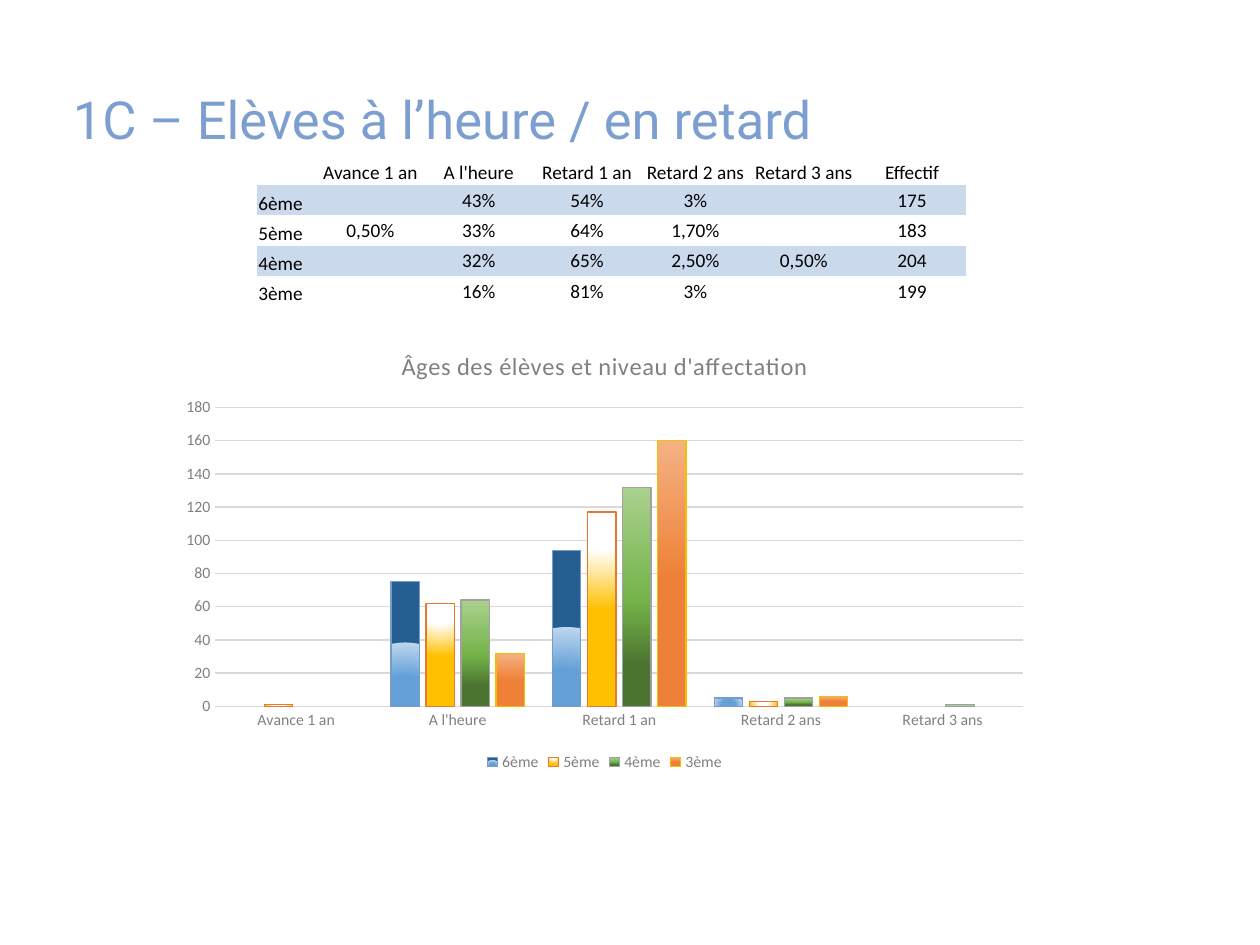
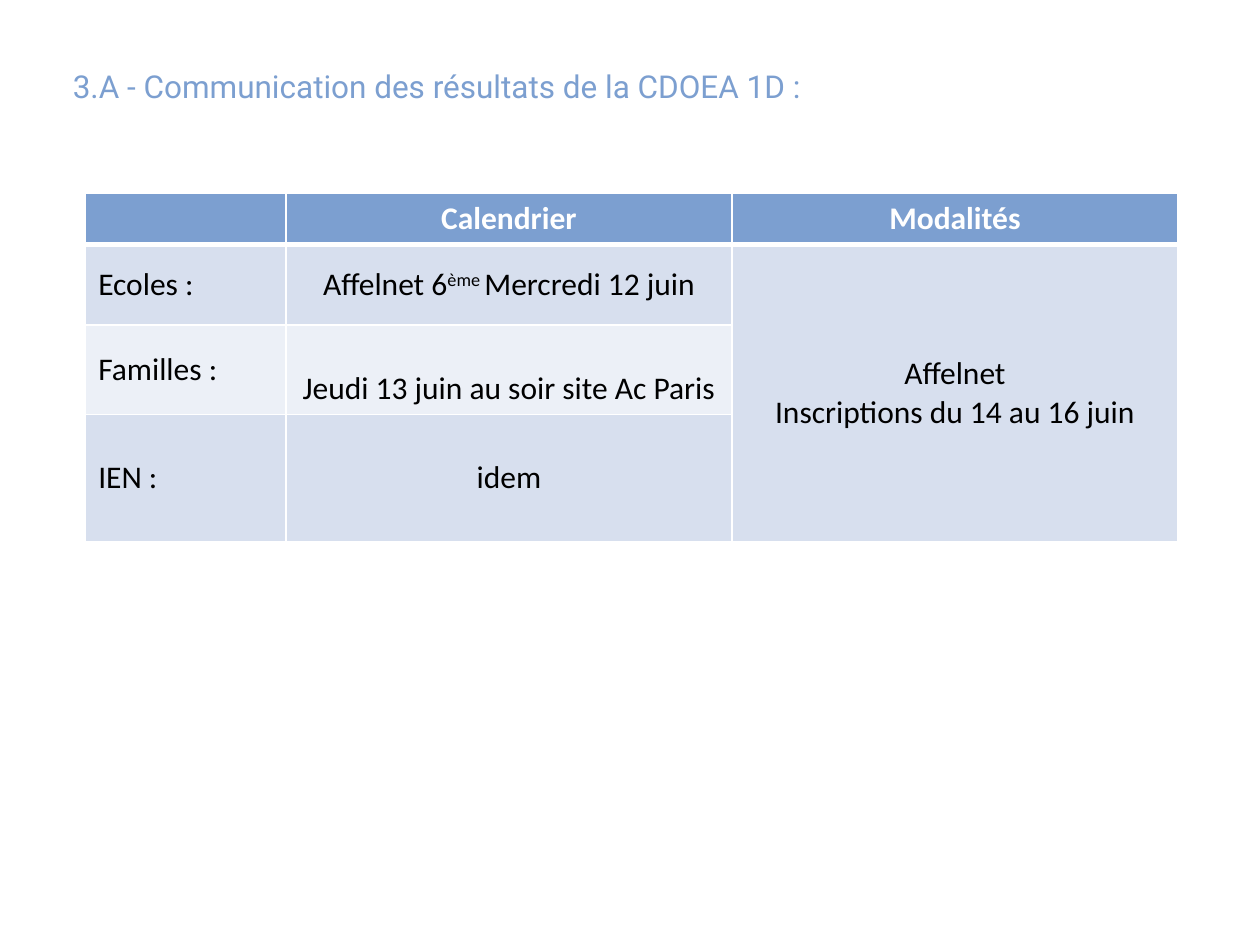
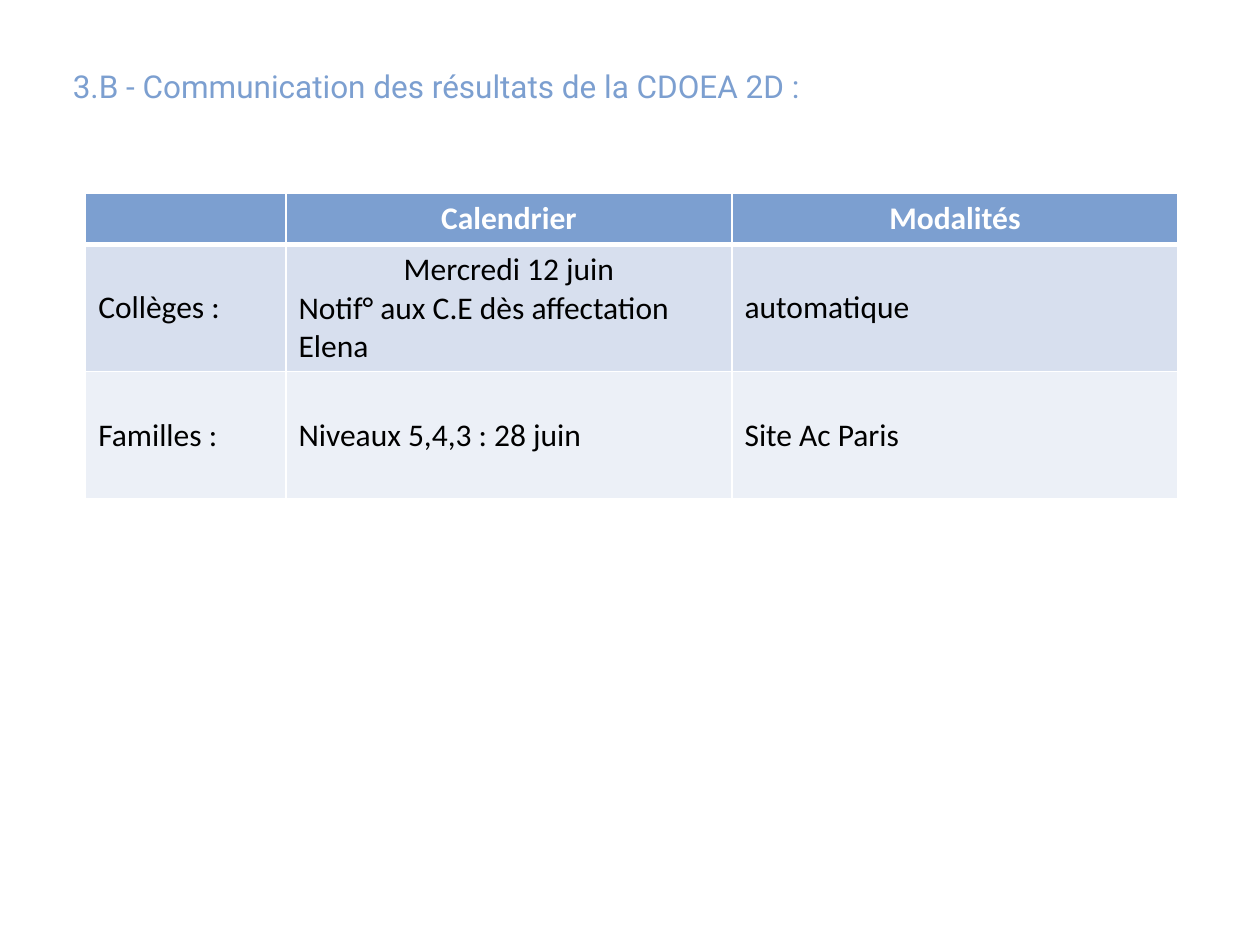
"""Build three slides on pupils' ages and on how the CDOEA results are announced."""
from lxml.etree import SubElement
from pptx import Presentation
from pptx.chart.data import CategoryChartData
from pptx.dml.color import RGBColor
from pptx.enum.chart import XL_CHART_TYPE as ChartType
from pptx.enum.chart import XL_LEGEND_POSITION as LegendPosition
from pptx.enum.chart import XL_TICK_MARK as TickMark
from pptx.enum.text import MSO_ANCHOR as Anchor
from pptx.enum.text import PP_ALIGN as Align
from pptx.oxml.ns import qn
from pptx.util import Inches, Pt

WIDTH, HEIGHT = Inches(10), Inches(7.5)
COLUMNS, ROWS = 100, 75

BLUE = RGBColor(0x7C, 0x9F, 0xD0)
PALE_BLUE = RGBColor(0xCB, 0xD9, 0xEC)
BAND_DARK = RGBColor(0xD7, 0xDF, 0xEE)
BAND_LIGHT = RGBColor(0xEC, 0xF0, 0xF7)
WHITE = RGBColor(0xFF, 0xFF, 0xFF)
BLACK = RGBColor(0x00, 0x00, 0x00)
GREY = RGBColor(0x80, 0x80, 0x80)
RULE_GREY = RGBColor(0xD9, 0xD9, 0xD9)
SKY = RGBColor(0x63, 0xA0, 0xD7)
PALE_SKY = RGBColor(0xBD, 0xD7, 0xEE)
NAVY = RGBColor(0x25, 0x5E, 0x91)
SKY_EDGE = RGBColor(0x79, 0x9B, 0xCB)
GOLD = RGBColor(0xFF, 0xC0, 0x00)
ORANGE_EDGE = RGBColor(0xE8, 0x7A, 0x30)
FOREST = RGBColor(0x4B, 0x74, 0x30)
GREEN = RGBColor(0x74, 0xB3, 0x49)
PALE_GREEN = RGBColor(0xA9, 0xD1, 0x8E)
GREY_EDGE = RGBColor(0xA1, 0xA1, 0xA1)
ORANGE = RGBColor(0xEE, 0x81, 0x37)
PEACH = RGBColor(0xF4, 0xB1, 0x83)
GOLD_EDGE = RGBColor(0xF9, 0xBC, 0x00)

NO_TABLE_STYLE = "{2D5ABB26-0587-4C30-8999-92F81FD0307C}"
THIN, THICK = Pt(1), Pt(3)

TITLE_FONT = {"name": "Roboto", "color": BLUE}
AXIS_FONT = {"name": "Calibri", "size": Pt(9), "color": GREY}
CHART_TITLE_FONT = {"name": "Calibri", "size": Pt(14), "bold": False, "color": GREY}
AGE_FONT = {"name": "Calibri", "size": Pt(11), "color": BLACK}
SCHEDULE_FONT = {"name": "Calibri", "size": Pt(18), "color": BLACK}
SCHEDULE_HEAD_FONT = SCHEDULE_FONT | {"bold": True, "color": WHITE}

AGE_LOOK = {
    "font": AGE_FONT, "head_font": AGE_FONT, "head_fill": WHITE,
    "bands": (PALE_BLUE, WHITE), "bordered": False, "label_anchor": Anchor.BOTTOM,
    "margins": {"margin_left": Inches(0.01), "margin_top": Inches(0.01),
                "margin_right": Inches(0.01), "margin_bottom": 0},
}
SCHEDULE_LOOK = {
    "font": SCHEDULE_FONT, "head_font": SCHEDULE_HEAD_FONT, "head_fill": BLUE,
    "bands": (BAND_DARK, BAND_LIGHT), "bordered": True, "label_anchor": Anchor.MIDDLE,
    "margins": {},
}

AGE_TABLE = [
    ["", "Avance 1 an", "A l'heure", "Retard 1 an", "Retard 2 ans", "Retard 3 ans", "Effectif"],
    ["6ème", "", "43%", "54%", "3%", "", "175"],
    ["5ème", "0,50%", "33%", "64%", "1,70%", "", "183"],
    ["4ème", "", "32%", "65%", "2,50%", "0,50%", "204"],
    ["3ème", "", "16%", "81%", "3%", "", "199"],
]
LEVELS = [
    ("6ème", (None, 75, 94, 5, None), SKY_EDGE,
     [(46, SKY), (100, PALE_SKY), (100, NAVY)], (50, 130, 50, -30)),
    ("5ème", (1, 62, 117, 3, None), ORANGE_EDGE,
     [(35, WHITE), (39, WHITE), (100, GOLD)], (50, -80, 50, 180)),
    ("4ème", (None, 64, 132, 5, 1), GREY_EDGE,
     [(19, FOREST), (48, GREEN), (100, PALE_GREEN)], None),
    ("3ème", (None, 32, 160, 6, None), GOLD_EDGE,
     [(48, ORANGE), (100, PEACH)], None),
]
SCHEDULE_HEAD = ["", "Calendrier", "Modalités"]
SCHEDULE_1D = [
    SCHEDULE_HEAD,
    ["Ecoles :", "Affelnet 6^ème ^Mercredi 12 juin", "Affelnet\nInscriptions du 14 au 16 juin"],
    ["Familles :", "Jeudi 13 juin au soir site Ac Paris", ""],
    ["IEN :", "idem", ""],
]
SCHEDULE_2D = [
    SCHEDULE_HEAD,
    ["Collèges :", "Mercredi 12 juin\nNotif° aux C.E dès affectation Elena", "automatique"],
    ["Familles :", "Niveaux 5,4,3 : 28 juin", "Site Ac Paris"],
]


def set_all(target, values):
    """Set each attribute of the target, sending a colour to its RGB value."""
    for name, value in values.items():
        if name == "color":
            target.color.rgb = value
        else:
            setattr(target, name, value)


class Deck:
    """Hold the presentation, its grid and the slide being filled."""

    def __init__(self):
        """Open an empty presentation of the right size."""
        self.show = Presentation()
        set_all(self.show, {"slide_width": WIDTH, "slide_height": HEIGHT})
        self.slide = None

    def across(self, columns):
        """Turn grid columns into a length."""
        return int(WIDTH * columns / COLUMNS)

    def down(self, rows):
        """Turn grid rows into a length."""
        return int(HEIGHT * rows / ROWS)

    def box(self, left, top, width, height):
        """Turn a grid area into a position and a size."""
        return self.across(left), self.down(top), self.across(width), self.down(height)

    def new_slide(self, title, size, height):
        """Start a slide with its title."""
        self.slide = self.show.slides.add_slide(self.show.slide_layouts[6])
        frame = self.slide.shapes.add_textbox(*self.box(4.8, 5, 90.3, height)).text_frame
        set_all(frame, {"word_wrap": True, "vertical_anchor": Anchor.MIDDLE})
        heading = frame.paragraphs[0]
        heading.line_spacing = 0.9
        self.add_line(heading, title, TITLE_FONT | {"size": Pt(size)})

    def add_line(self, paragraph, text, font):
        """Add a line of text in which carets enclose superscripts."""
        for index, part in enumerate(text.split("^")):
            if part:
                run = paragraph.add_run()
                run.text = part
                set_all(run.font, font)
                if index % 2:
                    run.font._element.set("baseline", "30000")
        if not text:
            SubElement(paragraph._p, qn("a:endParaRPr"), sz=str(int(font["size"].pt * 100)))

    def border(self, cell, row):
        """Rule a cell in white, with a thick line under the header."""
        widths = {"L": THIN, "R": THIN, "T": THICK if row == 1 else THIN,
                  "B": THICK if row == 0 else THIN}
        for side, width in widths.items():
            line = SubElement(cell._tc.get_or_add_tcPr(), qn(f"a:ln{side}"), w=str(int(width)))
            SubElement(SubElement(line, qn("a:solidFill")), qn("a:srgbClr"), val=str(WHITE))

    def table(self, left, top, widths, heights, texts, look, aligns):
        """Add a banded table and return it."""
        area = self.box(left, top, sum(widths), sum(heights))
        table = self.slide.shapes.add_table(len(heights), len(widths), *area).table
        set_all(table, {"first_row": False, "horz_banding": False})
        table._tbl.tblPr.find(qn("a:tableStyleId")).text = NO_TABLE_STYLE
        for column, width in zip(table.columns, widths):
            column.width = self.across(width)
        for row, height in zip(table.rows, heights):
            row.height = self.down(height)
        for row, line in enumerate(texts):
            for column, text in enumerate(line):
                self.fill_cell(table.cell(row, column), row, column, text, look, aligns[column])
        return table

    def fill_cell(self, cell, row, column, text, look, align):
        """Fill one cell with its text and its band colour."""
        if look["bordered"]:
            self.border(cell, row)
        cell.fill.solid()
        cell.fill.fore_color.rgb = look["bands"][(row - 1) % 2] if row else look["head_fill"]
        labelled = row == 0 or column == 0
        anchor = look["label_anchor"] if labelled else Anchor.MIDDLE
        set_all(cell, look["margins"] | {"vertical_anchor": anchor})
        frame = cell.text_frame
        for index, line in enumerate(text.split("\n")):
            paragraph = frame.add_paragraph() if index else frame.paragraphs[0]
            paragraph.alignment = align if row else Align.CENTER
            self.add_line(paragraph, line, look["font"] if row else look["head_font"])

    def schedule(self, heights, texts, aligns):
        """Add a table of dates and means."""
        return self.table(6.8, 15.3, (15.9, 35.4, 35.4), heights, texts, SCHEDULE_LOOK, aligns)

    def shade(self, series, stops, focus):
        """Give a series a gradient, round when it has a focus."""
        properties = series._element.get_or_add_spPr()
        gradient = SubElement(properties, qn("a:gradFill"), rotWithShape="1")
        properties.insert(0, gradient)
        stop_list = SubElement(gradient, qn("a:gsLst"))
        for position, color in stops:
            stop = SubElement(stop_list, qn("a:gs"), pos=str(position * 1000))
            SubElement(stop, qn("a:srgbClr"), val=str(color))
        if focus:
            circle = SubElement(gradient, qn("a:path"), path="circle")
            edges = {side: str(share * 1000) for side, share in zip("ltrb", focus)}
            SubElement(circle, qn("a:fillToRect"), **edges)
        else:
            SubElement(gradient, qn("a:lin"), ang=str(270 * 60000), scaled="0")

    def column_chart(self, area, title, categories, levels):
        """Add a clustered column chart with a shaded series for each level."""
        data = CategoryChartData()
        data.categories = categories
        for name, values, *_ in levels:
            data.add_series(name, values)
        frame = self.slide.shapes.add_chart(ChartType.COLUMN_CLUSTERED, *self.box(*area), data)
        chart = frame.chart
        set_all(chart.font, {"name": "Calibri", "size": Pt(10), "color": BLACK})
        set_all(chart, {"has_title": True, "has_legend": True})
        heading = chart.chart_title.text_frame.paragraphs[0]
        self.add_line(heading, title, CHART_TITLE_FONT)
        heading.runs[0].font._element.set("spc", "20")
        set_all(chart.legend, {"position": LegendPosition.BOTTOM, "include_in_layout": False})
        set_all(chart.legend.font, AXIS_FONT)
        ages, pupils = chart.category_axis, chart.value_axis
        for axis in (ages, pupils):
            set_all(axis, {"major_tick_mark": TickMark.NONE, "minor_tick_mark": TickMark.NONE})
            set_all(axis.tick_labels.font, AXIS_FONT)
        set_all(pupils, {"minimum_scale": 0, "maximum_scale": 180, "major_unit": 20})
        pupils.format.line.fill.background()
        for rule in (ages.format.line, pupils.major_gridlines.format.line):
            set_all(rule, {"color": RULE_GREY, "width": Pt(0.75)})
        plot = chart.plots[0]
        set_all(plot, {"gap_width": 100, "overlap": -24, "vary_by_categories": False})
        for series, (_, _, edge, stops, focus) in zip(plot.series, levels):
            series.invert_if_negative = False
            set_all(series.format.line, {"color": edge, "width": Pt(0.75)})
            self.shade(series, stops, focus)


def main():
    """Build the three slides and save them."""
    deck = Deck()

    deck.new_slide("1C – Elèves à l’heure / en retard", 30, 9.5)
    deck.table(20.4, 12.3, [4.7] + [8.6] * 6, [2.4] * 5, AGE_TABLE, AGE_LOOK,
               [Align.LEFT] + [Align.CENTER] * 6)
    deck.column_chart((13.4, 26.1, 69.2, 35.5), "Âges des élèves et niveau d'affectation",
                      AGE_TABLE[0][1:-1], LEVELS)

    deck.new_slide("3.A - Communication des résultats de la CDOEA 1D :", 18, 4)
    dates = deck.schedule((4.1, 6.4, 7.1, 10.1), SCHEDULE_1D,
                          (Align.LEFT, Align.CENTER, Align.CENTER))
    dates.cell(1, 2).merge(dates.cell(3, 2))
    dates.cell(2, 1).vertical_anchor = Anchor.BOTTOM

    deck.new_slide("3.B - Communication des résultats de la CDOEA 2D :", 18, 4)
    dates = deck.schedule((4.1, 10.1, 10.1), SCHEDULE_2D, [Align.LEFT] * 3)
    dates.cell(1, 1).text_frame.paragraphs[0].alignment = Align.CENTER

    deck.show.save("out.pptx")


if __name__ == "__main__":
    main()
